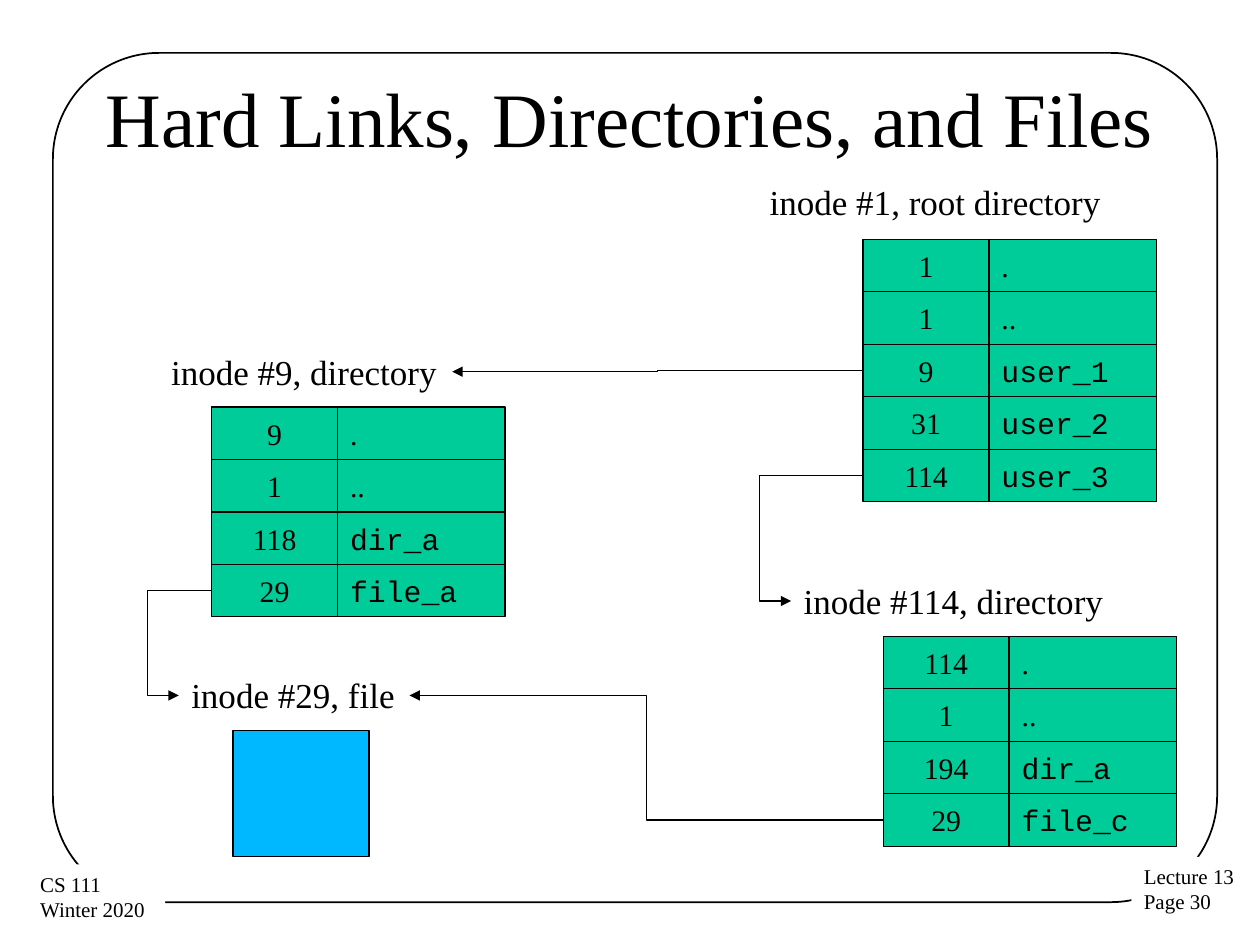
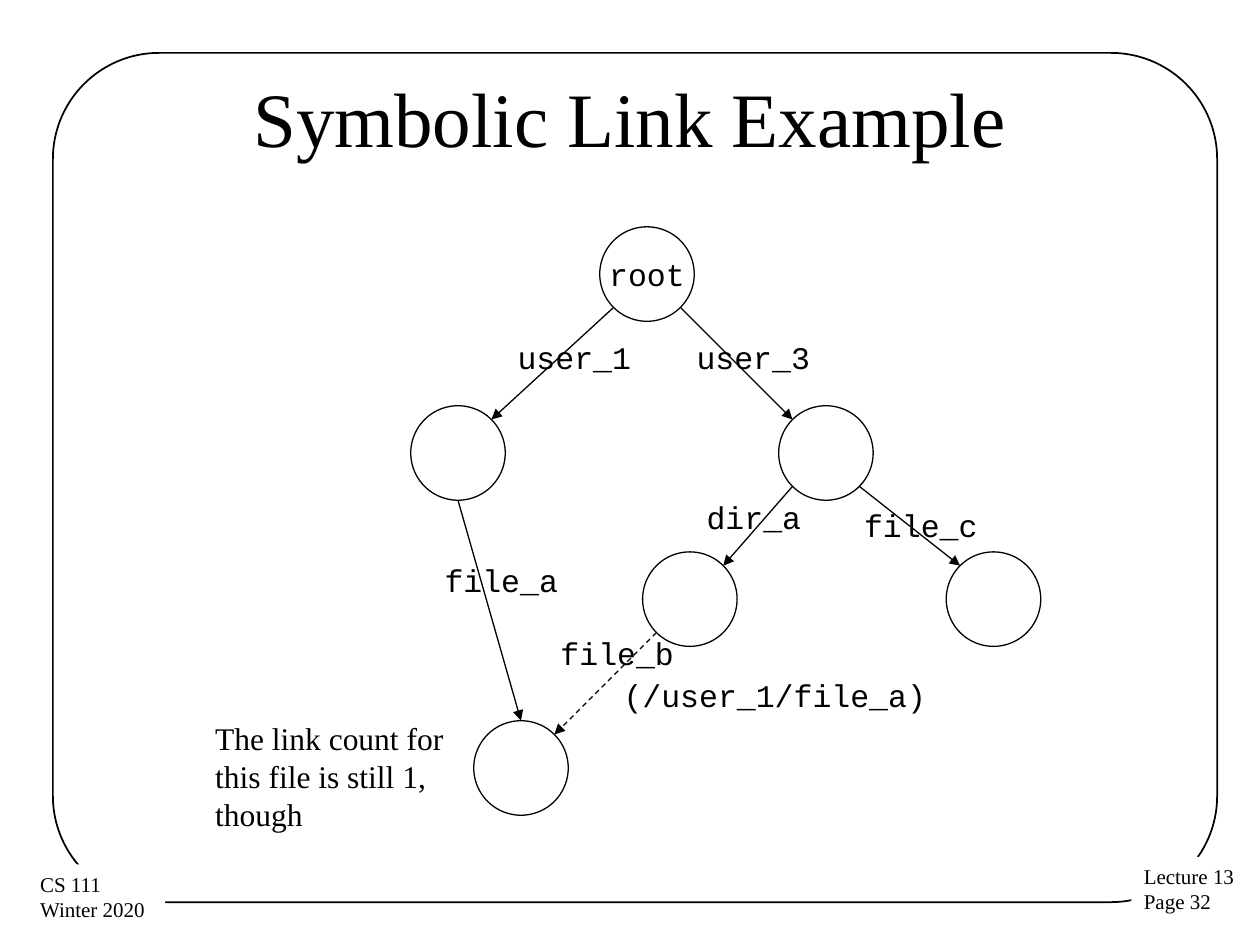
from math import cos, radians, sin

from lxml.etree import SubElement
from pptx import Presentation
from pptx.dml.color import RGBColor
from pptx.enum.dml import MSO_LINE
from pptx.enum.shapes import MSO_CONNECTOR, MSO_SHAPE
from pptx.enum.text import MSO_ANCHOR, MSO_AUTO_SIZE, PP_ALIGN
from pptx.oxml.ns import qn
from pptx.util import Inches, Pt

COLORS = {"ink": "000000", "paper": "FFFFFF", "cell": "00CC99", "file": "00B8FF"}
SERIF, MONO = "Times New Roman", "Courier New"
ROW = 5 / 12  # height of a directory entry
KEY, NAME = 1, 1.33  # widths of the two entry columns
NODE = 0.75  # diameter of a tree node
LEFT, RIGHT = 1, 3  # connection sites of a rectangle
GROW = {"word_wrap": False, "auto_size": MSO_AUTO_SIZE.SHAPE_TO_FIT_TEXT}
MIDDLE = {"word_wrap": False, "vertical_anchor": MSO_ANCHOR.MIDDLE}


def color(name):
    return RGBColor.from_string(COLORS[name])


def apply(target, values):
    for key, value in values.items():
        setattr(target, key, value)


def write(shape, text, size, font=SERIF, align=PP_ALIGN.LEFT, frame=GROW):
    body = shape.text_frame
    body.text = text
    apply(body, frame)
    for para in body.paragraphs:
        para.alignment = align
        apply(para.font, {"name": font, "size": Pt(size)})
        para.font.color.rgb = color("ink")


def draw(slide, kind, box, fill=None, line=0.75):
    shape = slide.shapes.add_shape(kind, *map(Inches, box))
    shape.shadow.inherit = False
    if fill:
        shape.fill.solid()
        shape.fill.fore_color.rgb = color(fill)
    else:
        shape.fill.background()
    if line:
        shape.line.color.rgb = color("ink")
        shape.line.width = Pt(line)
    else:
        shape.line.fill.background()
    return shape


def label(slide, text, box, size, font=SERIF, wrap=False):
    shape = slide.shapes.add_textbox(*map(Inches, box))
    write(shape, text, size, font, frame={**GROW, "word_wrap": wrap})
    return shape


def arrow(slide, kind, start=(0, 0), end=(0, 0)):
    link = slide.shapes.add_connector(kind, *map(Inches, (*start, *end)))
    link.line.color.rgb = color("ink")
    link.line.width = Pt(0.75)
    SubElement(link.line._get_or_add_ln(), qn("a:tailEnd"), type="triangle")
    SubElement(link._element.spPr, qn("a:effectLst"))
    return link


def elbow(slide, source, target, site, bend):
    """Join the left of source to a site of target, turning at x = bend."""
    link = arrow(slide, MSO_CONNECTOR.ELBOW)
    link.begin_connect(source, LEFT)
    link.end_connect(target, site)
    ratio = (link.begin_x - Inches(bend)) / (link.begin_x - link.end_x)
    geom = link._element.spPr.find(qn("a:prstGeom"))
    guides = geom.find(qn("a:avLst"))
    if guides is None:
        guides = SubElement(geom, qn("a:avLst"))
    SubElement(guides, qn("a:gd"), name="adj1", fmla=f"val {round(ratio * 100000)}")


def base(deck, title, page):
    """Add a slide with the shared frame, footers and title."""
    slide = deck.slides.add_slide(deck.slide_layouts[5])
    frame = draw(slide, MSO_SHAPE.ROUNDED_RECTANGLE, (0.42, 0.42, 9.24, 6.74), line=1)
    frame.adjustments[0] = 0.125
    for text, box in (
        (f"Lecture 13\nPage {page}", (8.98, 6.8, 0.93, 0.51)),
        ("CS 111\nWinter 2020", (0.22, 6.86, 1.09, 0.51)),
    ):
        write(draw(slide, MSO_SHAPE.RECTANGLE, box, "paper", 0), text, 12)
    head = slide.shapes.title
    places = zip(("left", "top", "width", "height"), map(Inches, (0.5, 0.3, 9, 1.25)))
    apply(head, dict(places))
    write(head, title, 44, align=PP_ALIGN.CENTER,
          frame={**MIDDLE, "word_wrap": True, "auto_size": MSO_AUTO_SIZE.NONE})
    return slide


def folder(slide, left, top, entries):
    """Draw a directory's entries; return the inode cells by entry name."""
    cells = {}
    for row, (inode, name) in enumerate(entries):
        y = top + row * ROW
        cell = draw(slide, MSO_SHAPE.RECTANGLE, (left, y, KEY, ROW), "cell")
        write(cell, str(inode), 17, align=PP_ALIGN.CENTER, frame=MIDDLE)
        entry = draw(slide, MSO_SHAPE.RECTANGLE, (left + KEY, y, NAME, ROW), "cell")
        write(entry, name, 17, MONO if name.strip(".") else SERIF, frame=MIDDLE)
        cells[name] = cell
    return cells


def hard(deck):
    slide = base(deck, "Hard Links, Directories, and Files", 30)

    # Inode captions
    label(slide, "inode #1, root directory", (6.01, 1.38, 2.85, 0.44), 20)
    user1 = label(slide, "inode #9, directory", (1.26, 2.73, 2.33, 0.44), 20)
    user3 = label(slide, "inode #114, directory", (6.28, 4.55, 2.6, 0.44), 20)
    file = label(slide, "inode #29, file", (1.42, 5.3, 1.83, 0.44), 20)

    # Directory contents and the file block
    root = folder(slide, 6.85, 1.9, [
        (1, "."), (1, ".."), (9, "user_1"), (31, "user_2"), (114, "user_3")])
    first = folder(slide, 1.68, 3.23, [
        (9, "."), (1, ".."), (118, "dir_a"), (29, "file_a")])
    third = folder(slide, 7.01, 5.05, [
        (114, "."), (1, ".."), (194, "dir_a"), (29, "file_c")])
    draw(slide, MSO_SHAPE.RECTANGLE, (1.85, 5.8, 1.08, 1), "file")

    # Links from entries to inodes
    for source, target, site, bend in (
        (root["user_1"], user1, RIGHT, 5.22),
        (root["user_3"], user3, LEFT, 6.03),
        (first["file_a"], file, LEFT, 1.17),
        (third["file_c"], file, RIGHT, 5.13),
    ):
        elbow(slide, source, target, site, bend)


def rim(node, angle):
    """Point on a node's outline, clockwise from the right."""
    turn, half = radians(angle), NODE / 2
    return node[0] + half * (1 + cos(turn)), node[1] + half * (1 + sin(turn))


def tree(slide, left, top):
    # Nodes
    nodes = {
        "root": (1.5, 0), "user1": (0, 1.42), "user3": (2.92, 1.42),
        "dir": (1.84, 2.58), "filec": (4.25, 2.58), "filea": (0.5, 3.92),
    }
    nodes = {name: (left + x, top + y) for name, (x, y) in nodes.items()}
    for name, spot in nodes.items():
        node = draw(slide, MSO_SHAPE.OVAL, (*spot, NODE, NODE))
        if name == "root":
            write(node, name, 18, MONO, PP_ALIGN.CENTER, MIDDLE)

    # Named links, the symbolic one dashed
    for source, out, target, into, text, (x, y) in (
        ("root", 135, "user1", -45, "user_1", (0.75, 0.83)),
        ("root", 45, "user3", -135, "user_3", (2.17, 0.83)),
        ("user3", 135, "dir", -45, "dir_a", (2.25, 2.1)),
        ("user3", 45, "filec", -135, "file_c", (3.5, 2.17)),
        ("user1", 90, "filea", -90, "file_a", (0.17, 2.6)),
        ("dir", 135, "filea", -45, "file_b", (1.09, 3.18)),
    ):
        link = arrow(slide, MSO_CONNECTOR.STRAIGHT,
                     rim(nodes[source], out), rim(nodes[target], into))
        if text == "file_b":
            link.line.dash_style = MSO_LINE.DASH
        label(slide, text, (left + x, top + y, 1.17, 0.4), 18, MONO, True)
    label(slide, "(/user_1/file_a)", (left + 1.59, top + 3.52, 2.92, 0.4), 18, MONO, True)


def soft(deck):
    slide = base(deck, "Symbolic Link Example", 32)
    tree(slide, 3.26, 1.8)
    label(slide, "The link count for this file is still 1, though",
          (1.61, 5.66, 2.42, 1.01), 18, wrap=True)


def main():
    deck = Presentation()
    apply(deck, {"slide_width": Inches(10), "slide_height": Inches(7.5)})
    hard(deck)
    soft(deck)
    deck.save("out.pptx")


if __name__ == "__main__":
    main()
